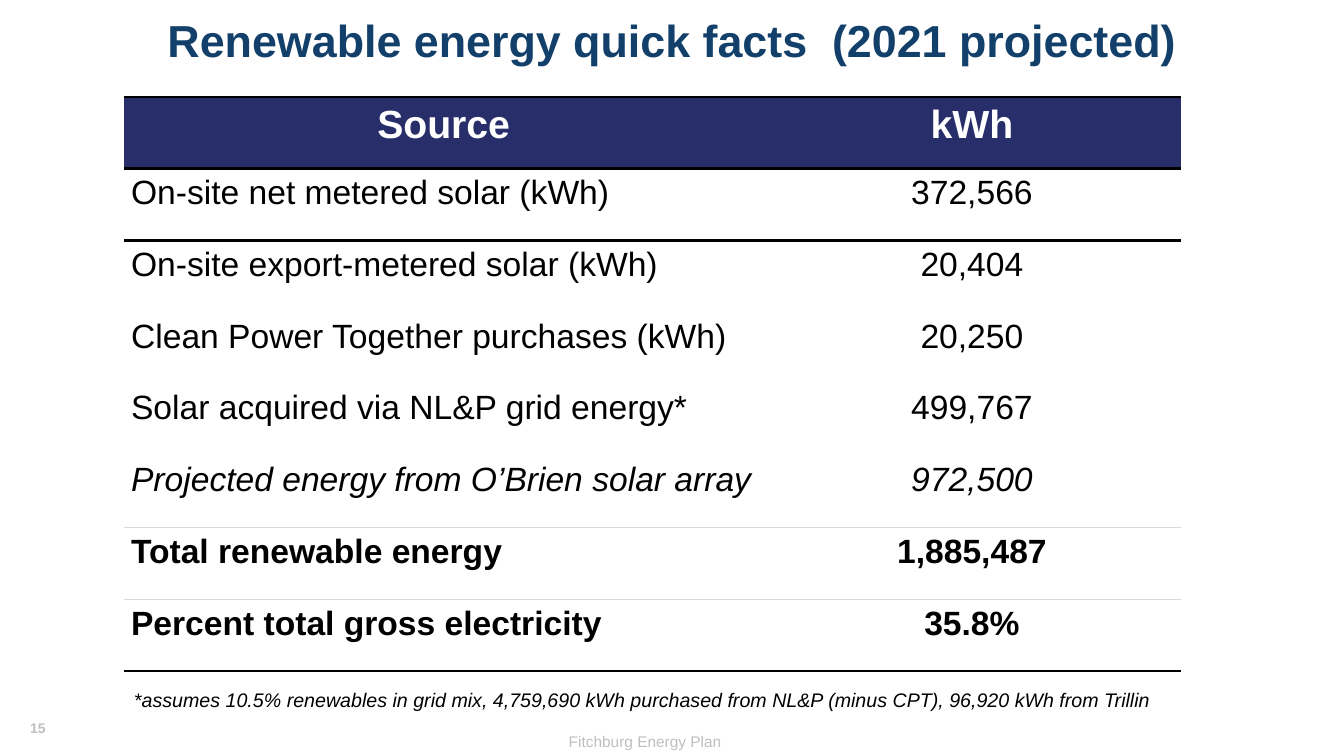
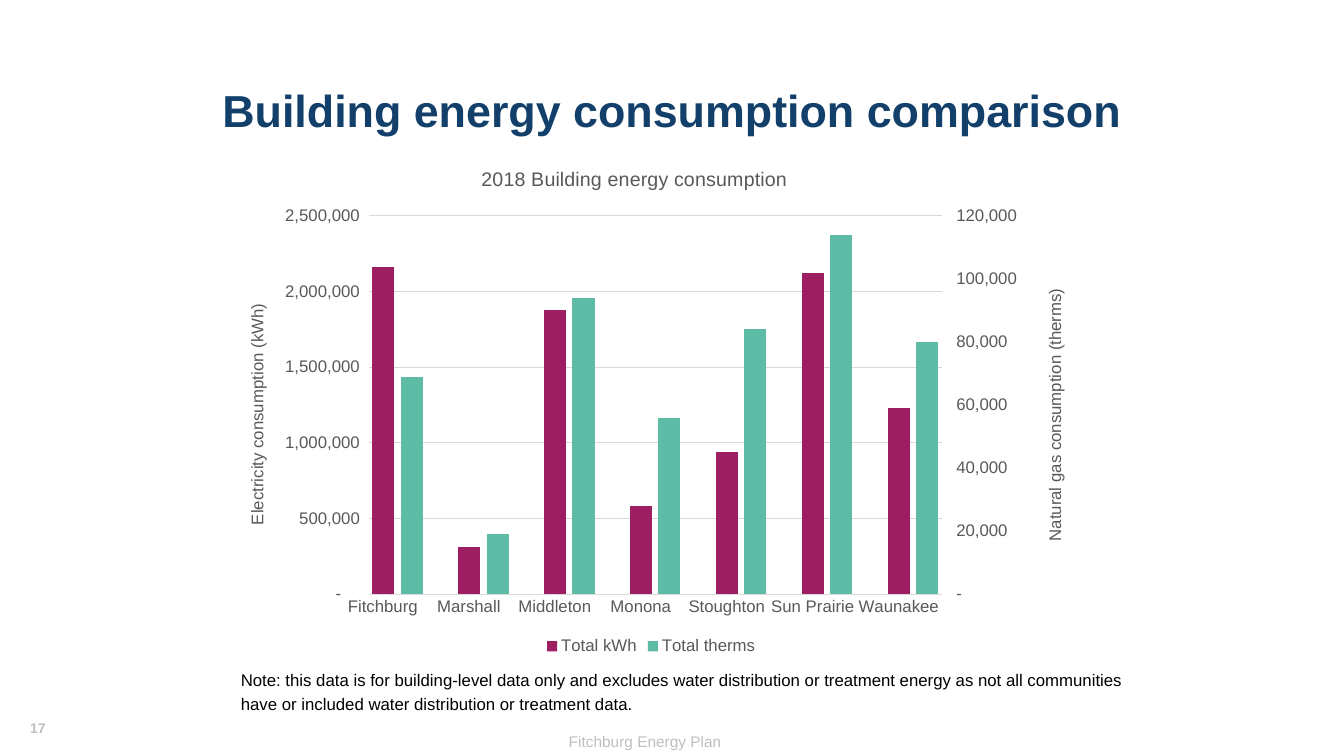
from copy import deepcopy

from lxml import etree
from pptx import Presentation
from pptx import util as u
from pptx.chart.axis import CategoryAxis, ValueAxis
from pptx.chart.data import CategoryChartData
from pptx.dml.color import RGBColor
from pptx.enum import chart as charts, text
from pptx.oxml import parse_xml
from pptx.oxml.ns import nsdecls, qn

FONT = "Arial"
BLACK = "000000"
WHITE = "FFFFFF"
TITLE_BLUE = "13406A"
HEADER_BLUE = "272E69"
FOOTER_GREY = "BFBFBF"
RULE_GREY = "DADAD7"
GRID_GREY = "D9D9D9"
LABEL_GREY = "595959"
CENTER = text.PP_ALIGN.CENTER
LEFT = text.PP_ALIGN.LEFT

presentation = Presentation()
presentation.slide_width = u.Inches(13.33)
presentation.slide_height = u.Inches(7.5)
column = presentation.slide_width / 100
row = presentation.slide_height / 100


def style(font, size, color, bold=False, italic=False):
    font.name = FONT
    font.size = u.Pt(size)
    font.bold = bold
    font.italic = italic
    font.color.rgb = RGBColor.from_string(color)


def add_text(slide, words, box, size, color, align=LEFT, spacing=1, bold=False,
             italic=False, wrap=True, anchor=text.MSO_ANCHOR.TOP):
    left, top, width, height = box
    shape = slide.shapes.add_textbox(int(left * column), int(top * row),
                                     int(width * column), int(height * row))
    shape.text_frame.word_wrap = wrap
    shape.text_frame.vertical_anchor = anchor
    paragraph = shape.text_frame.paragraphs[0]
    paragraph.text = words
    paragraph.alignment = align
    paragraph.line_spacing = spacing
    style(paragraph.font, size, color, bold, italic)


slides = []
for number, title, title_top in (
    ("15", "Renewable energy quick facts  (2021 projected)", -4),
    ("17", "Building energy consumption comparison", 5.33),
):
    slide = presentation.slides.add_slide(presentation.slide_layouts[6])
    add_text(slide, "Fitchburg Energy Plan", (32.63, 96.13, 30.75, 3.87), 11, FOOTER_GREY, CENTER)
    add_text(slide, number, (1.5, 94.53, 2.8, 3.6), 10, FOOTER_GREY, bold=True, wrap=False)
    add_text(slide, title, (6.9, title_top, 86.25, 19.33), 32, TITLE_BLUE, CENTER, 0.9,
             bold=True, anchor=text.MSO_ANCHOR.MIDDLE)
    slides.append(slide)
facts_slide, comparison_slide = slides

facts = [
    ("Source", "kWh"),
    ("On-site net metered solar (kWh)", "372,566"),
    ("On-site export-metered solar (kWh)", "20,404"),
    ("Clean Power Together purchases (kWh)", "20,250"),
    ("Solar acquired via NL&P grid energy*", "499,767"),
    ("Projected energy from O’Brien solar array", "972,500"),
    ("Total renewable energy", "1,885,487"),
    ("Percent total gross electricity", "35.8%"),
]
projected_row = 5
total_rows = (6, 7)
heavy, light = (BLACK, 2), (RULE_GREY, 0.75)
bottom_rules = {0: heavy, 5: light, 6: light, 7: heavy}
top_rules = {0: heavy, 1: heavy, 6: light, 7: light}

table_shape = facts_slide.shapes.add_table(
    len(facts), 2, int(9.23 * column), int(12.8 * row), int(78.62 * column), int(76 * row))
table = table_shape.table
table.first_row = False
table.horz_banding = False
table._tbl.tblPr.find(qn("a:tableStyleId")).text = "{2D5ABB26-0587-4C30-8999-92F81FD0307C}"
for table_column, share in zip(table.columns, (47.56, 31.06)):
    table_column.width = int(share * column)
for r, values in enumerate(facts):
    table.rows[r].height = int(9.5 * row)
    header = r == 0
    for c, value in enumerate(values):
        cell = table.cell(r, c)
        cell.margin_left = cell.margin_right = u.Inches(0.07)
        cell.margin_top = cell.margin_bottom = 0
        for side, rules in (("lnT", top_rules), ("lnB", bottom_rules)):
            if r in rules:
                color, points = rules[r]
                cell._tc.get_or_add_tcPr().append(parse_xml(
                    f'<a:{side} {nsdecls("a")} w="{u.Pt(points)}"><a:solidFill>'
                    f'<a:srgbClr val="{color}"/></a:solidFill></a:{side}>'))
        cell.fill.solid()
        cell.fill.fore_color.rgb = RGBColor.from_string(HEADER_BLUE if header else WHITE)
        paragraph = cell.text_frame.paragraphs[0]
        paragraph.text = value
        paragraph.alignment = CENTER if header or c == 1 else LEFT
        paragraph.line_spacing = 1.15
        style(paragraph.font, 28 if header else 24, WHITE if header else BLACK,
              header or r in total_rows, r == projected_row)

add_text(facts_slide,
         "*assumes 10.5% renewables in grid mix, 4,759,690 kWh purchased from NL&P (minus CPT), "
         "96,920 kWh from Trillin",
         (9.23, 90.4, 78.62, 4.53), 14, BLACK, italic=True)

consumption = [
    ("Fitchburg", 2160000, 69000),
    ("Marshall", 310000, 19000),
    ("Middleton", 1880000, 94000),
    ("Monona", 580000, 56000),
    ("Stoughton", 940000, 84000),
    ("Sun Prairie", 2120000, 114000),
    ("Waunakee", 1230000, 80000),
]
categories, electricity, gas = [], [], []
for city, kwh, therms in consumption:
    categories += [city, "", ""]
    electricity += [kwh, None, None]
    gas += [None, therms, None]

number_format = r'_(* #,##0_);_(* \(#,##0\);_(* "-"??_);_(@_)'
chart_data = CategoryChartData(number_format="#,##0")
chart_data.categories = categories[:-1]
chart_data.add_series("Total kWh", electricity[:-1])
chart_data.add_series("Total therms", gas[:-1])
chart = comparison_slide.shapes.add_chart(
    charts.XL_CHART_TYPE.COLUMN_CLUSTERED, int(16.2 * column), int(19.47 * row),
    int(64.52 * column), int(67.73 * row), chart_data).chart
style(chart.font, 12, BLACK)
chart.has_legend = True
chart.legend.position = charts.XL_LEGEND_POSITION.BOTTOM
chart.legend.include_in_layout = False
style(chart.legend.font, 12, LABEL_GREY)

plot = chart.plots[0]
plot.gap_width = 30
plot.overlap = 50
plot.vary_by_categories = False
for series, color in zip(plot.series, ("9D1F61", "5EBBA5")):
    series.format.fill.solid()
    series.format.fill.fore_color.rgb = RGBColor.from_string(color)

city_axis, kwh_axis = chart.category_axis, chart.value_axis
kwh_axis.major_gridlines.format.line.color.rgb = RGBColor.from_string(GRID_GREY)
kwh_axis.major_gridlines.format.line.width = u.Pt(0.75)
city_axis.format.line.color.rgb = RGBColor.from_string(GRID_GREY)
city_axis.format.line.width = u.Pt(0.75)
city_axis.major_tick_mark = charts.XL_TICK_MARK.NONE
style(city_axis.tick_labels.font, 12, LABEL_GREY)
city_axis._element.find(qn("c:txPr")).find(qn("a:bodyPr")).set("rot", "-60000000")

kwh_bars = plot._element
therm_bars = deepcopy(kwh_bars)
kwh_bars.addnext(therm_bars)
kwh_bars.remove(kwh_bars.findall(qn("c:ser"))[1])
therm_bars.remove(therm_bars.findall(qn("c:ser"))[0])
for reference, axis_id in zip(therm_bars.findall(qn("c:axId")), ("5001", "5002")):
    reference.set("val", axis_id)

therm_value = deepcopy(kwh_axis._element)
therm_category = deepcopy(city_axis._element)
kwh_axis._element.addnext(therm_value)
therm_value.addnext(therm_category)
for element, own, other in ((therm_value, "5002", "5001"), (therm_category, "5001", "5002")):
    element.find(qn("c:axId")).set("val", own)
    element.find(qn("c:crossAx")).set("val", other)
therm_value.find(qn("c:axPos")).set("val", "r")
therm_value.find(qn("c:crosses")).set("val", "max")
CategoryAxis(therm_category).visible = False
therm_axis = ValueAxis(therm_value)
therm_axis.has_major_gridlines = False

for axis, words, top_value, step, tick in (
    (kwh_axis, "Electricity consumption (kWh)", 2500000, 500000, charts.XL_TICK_MARK.NONE),
    (therm_axis, "Natural gas consumption (therms)", 120000, 20000, charts.XL_TICK_MARK.OUTSIDE),
):
    axis.minimum_scale = 0
    axis.maximum_scale = top_value
    axis.major_unit = step
    axis.major_tick_mark = tick
    axis.format.line.fill.background()
    axis.tick_labels.number_format = number_format
    axis.tick_labels.number_format_is_linked = False
    style(axis.tick_labels.font, 12, LABEL_GREY)
    axis.axis_title.text_frame.text = words
    axis.axis_title.text_frame._txBody.bodyPr.set("rot", "-5400000")
    axis.axis_title.text_frame._txBody.bodyPr.set("vert", "horz")
    style(axis.axis_title.text_frame.paragraphs[0].font, 12, LABEL_GREY)

chart.has_title = True
chart.chart_title.text_frame.text = "2018 Building energy consumption"
style(chart.chart_title.text_frame.paragraphs[0].font, 14, LABEL_GREY)

for owner, marks in (
    (chart._chartSpace.chart.plotArea, {"x": 0.174, "y": 0.134, "w": 0.661, "h": 0.739}),
    (chart.chart_title._element, {"x": 0.3, "y": 0.03}),
    (kwh_axis.axis_title._element, {"x": 0.03, "y": 0.3}),
    (therm_axis.axis_title._element, {"x": 0.95, "y": 0.27}),
):
    for old in owner.findall(qn("c:layout")):
        owner.remove(old)
    layout = parse_xml(f'<c:layout {nsdecls("c")}><c:manualLayout/></c:layout>')
    if "w" in marks:
        etree.SubElement(layout[0], qn("c:layoutTarget")).set("val", "inner")
    for key in ("x", "y"):
        etree.SubElement(layout[0], qn(f"c:{key}Mode")).set("val", "edge")
    for key, share in marks.items():
        etree.SubElement(layout[0], qn(f"c:{key}")).set("val", str(share))
    words = owner.find(qn("c:tx"))
    if words is None:
        owner.insert(0, layout)
    else:
        words.addnext(layout)

add_text(comparison_slide,
         "Note: this data is for building-level data only and excludes water distribution or "
         "treatment energy as not all communities have or included water distribution or "
         "treatment data.",
         (17.18, 87.6, 67.89, 7.33), 12, BLACK, spacing=1.15)

presentation.save("out.pptx")
